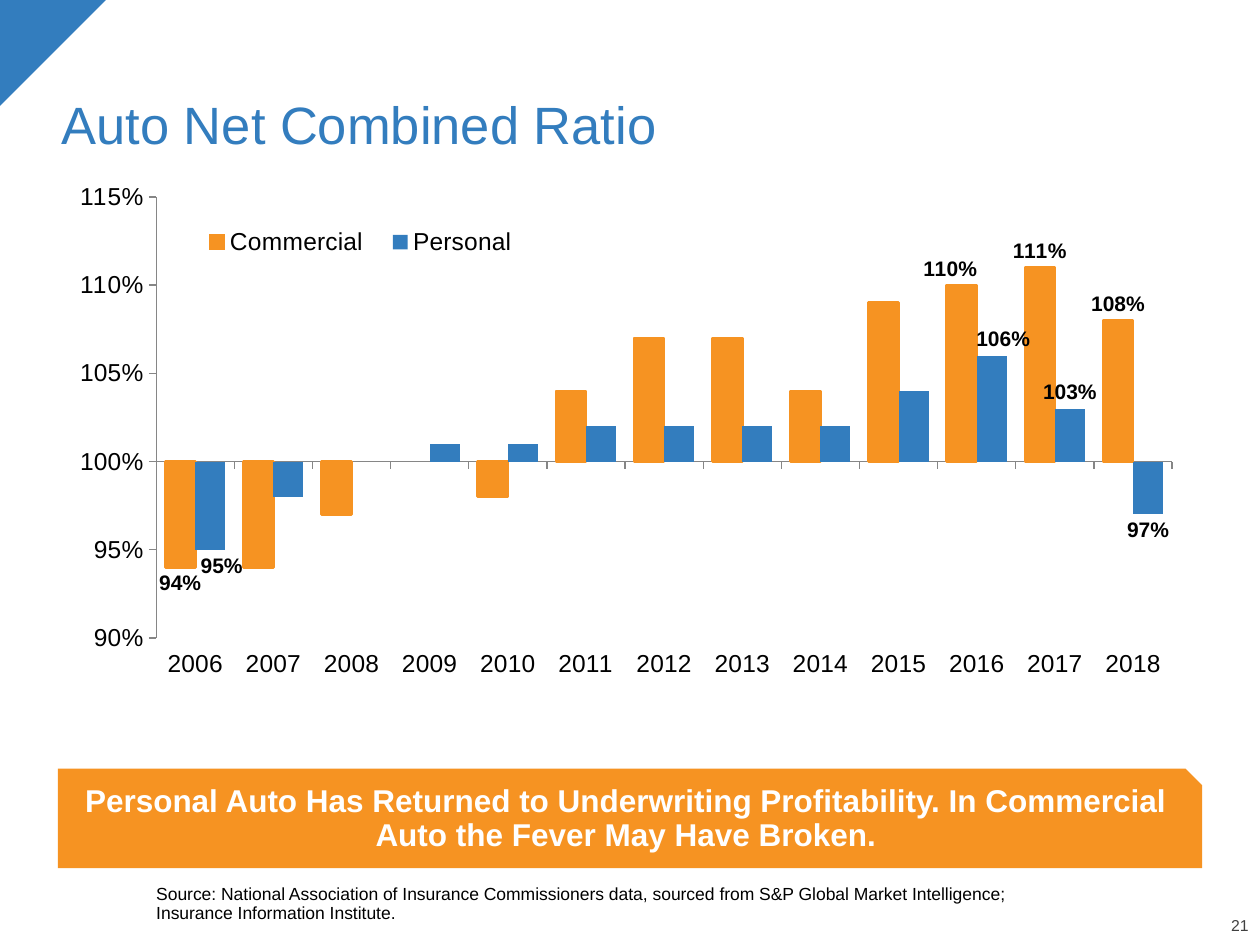
from dataclasses import dataclass

from pptx import Presentation
from pptx.chart.data import CategoryChartData
from pptx.dml.color import RGBColor
from pptx.enum.chart import (XL_CHART_TYPE, XL_LABEL_POSITION,
                             XL_LEGEND_POSITION, XL_TICK_LABEL_POSITION,
                             XL_TICK_MARK)
from pptx.enum.shapes import MSO_SHAPE
from pptx.enum.text import MSO_ANCHOR, PP_ALIGN
from pptx.oxml import parse_xml
from pptx.oxml.ns import nsdecls
from pptx.util import Inches, Pt


@dataclass(frozen=True)
class Theme:
    font: str = "Arial"
    blue: str = "337DBE"
    orange: str = "F69322"
    black: str = "000000"
    white: str = "FFFFFF"
    grey: str = "404040"
    axis: str = "868686"
    title: int = 30
    callout: int = 18
    chart: int = 14
    label: int = 12
    source: int = 10
    number: int = 9


def rgb(value):
    return RGBColor.from_string(value)


def style_font(font, name, size, color, bold=False):
    font.name, font.size, font.bold = name, Pt(size), bold
    font.color.rgb = rgb(color)


def write(sp, text, *, font, size, color, bold=False, align=PP_ALIGN.LEFT,
          anchor=MSO_ANCHOR.BOTTOM, insets=(0, 0, 0, 0)):
    """Fill a shape with one paragraph; a newline becomes a line break."""
    tf = sp.text_frame
    tf.word_wrap = True
    tf.vertical_anchor = anchor
    (tf.margin_left, tf.margin_top,
     tf.margin_right, tf.margin_bottom) = map(Inches, insets)
    p = tf.paragraphs[0]
    p.text = text
    p.alignment = align
    p.line_spacing = 0.9
    for r in p.runs:
        style_font(r.font, font, size, color, bold)


def layout_xml(**parts):
    """Manual chart layout; every keyword is a c:manualLayout child."""
    body = "".join(f'<c:{tag} val="{val}"/>' for tag, val in parts.items())
    return parse_xml(f'<c:layout {nsdecls("c")}><c:manualLayout>{body}'
                     '</c:manualLayout></c:layout>')


class SlideBuilder:
    """Places elements on a grid of 100 columns by 75 rows."""

    def __init__(self, prs, theme):
        self.theme = theme
        self.unit = prs.slide_width / 100
        self.slide = prs.slides.add_slide(prs.slide_layouts[6])

    def box(self, *cells):
        return [round(c * self.unit) for c in cells]

    def text(self, cells, text, **fmt):
        sp = self.slide.shapes.add_textbox(*self.box(*cells))
        write(sp, text, font=self.theme.font, **fmt)

    def shape(self, kind, cells, color, rotation=0):
        sp = self.slide.shapes.add_shape(kind, *self.box(*cells))
        sp.shadow.inherit = False
        sp.fill.solid()
        sp.fill.fore_color.rgb = rgb(color)
        sp.line.fill.background()
        sp.rotation = rotation
        return sp

    def callout(self, cells, text):
        t = self.theme
        sp = self.shape(MSO_SHAPE.SNIP_1_RECTANGLE, cells, t.orange)
        write(sp, text, font=t.font, size=t.callout, color=t.white, bold=True,
              align=PP_ALIGN.CENTER, anchor=MSO_ANCHOR.MIDDLE,
              insets=(0.1, 0.05, 0.1, 0.1))

    def column_chart(self, cells, categories, series):
        """series: name -> (values, color, line width, {point: label shift})."""
        t = self.theme
        data = CategoryChartData(number_format="0%")
        data.categories = categories
        for name, (values, *_) in series.items():
            data.add_series(name, values)
        chart = self.slide.shapes.add_chart(
            XL_CHART_TYPE.COLUMN_CLUSTERED, *self.box(*cells), data).chart
        chart.has_title = False
        style_font(chart.font, t.font, t.chart, t.black)
        plot = chart.plots[0]
        plot.gap_width, plot.overlap = 60, 0
        plot.vary_by_categories = False
        for ser, (_, color, width, shifts) in zip(plot.series, series.values()):
            self.style_series(ser, color, width, shifts)
        self.style_axes(chart)

        chart.has_legend = True
        legend = chart.legend
        legend.position = XL_LEGEND_POSITION.TOP
        legend.include_in_layout = False
        legend._element.xpath("c:legendPos")[0].addnext(layout_xml(
            xMode="edge", yMode="edge", x=0.12, y=0.08, w=0.29, h=0.07))
        area = chart._chartSpace.xpath("c:chart/c:plotArea")[0]
        for old in area.xpath("c:layout"):
            area.remove(old)
        area.insert(0, layout_xml(
            layoutTarget="inner", xMode="edge", yMode="edge",
            x=0.086, y=0.036, w=0.889, h=0.771))

    def style_series(self, ser, color, width, shifts):
        t = self.theme
        ser.invert_if_negative = False
        ser.format.fill.solid()
        ser.format.fill.fore_color.rgb = rgb(color)
        if width:
            ser.format.line.color.rgb = rgb(color)
            ser.format.line.width = Pt(width)
        for i, shift in shifts.items():
            label = ser.points[i].data_label
            style_font(label.font, t.font, t.label, t.black, bold=True)
            label.position = XL_LABEL_POSITION.OUTSIDE_END
            if shift:
                idx = ser._element.xpath(f'.//c:dLbl/c:idx[@val="{i}"]')[0]
                idx.addnext(layout_xml(x=shift, y=0))
        ser.data_labels.show_value = False

    def style_axes(self, chart):
        value, category = chart.value_axis, chart.category_axis
        value.minimum_scale, value.maximum_scale = 0.9, 1.15
        value.major_unit = 0.05
        value.crosses_at = 1
        value.has_major_gridlines = False
        value.tick_labels.number_format = "0%"
        value.tick_labels.number_format_is_linked = False
        category.tick_label_position = XL_TICK_LABEL_POSITION.LOW
        for axis in (value, category):
            axis.major_tick_mark = XL_TICK_MARK.OUTSIDE
            axis.format.line.color.rgb = rgb(self.theme.axis)


def main():
    prs = Presentation()
    prs.slide_width, prs.slide_height = Inches(10), Inches(7.5)
    t = Theme()
    s = SlideBuilder(prs, t)

    s.shape(MSO_SHAPE.RIGHT_TRIANGLE, (0, 0, 8.4, 8.4), t.blue, rotation=90)
    s.text((94.3, 72.9, 4.8, 1.3), "21", size=t.number, color=t.grey,
           align=PP_ALIGN.RIGHT)
    s.text((3.9, 2.5, 92.5, 10.4), "Auto Net Combined Ratio", size=t.title,
           color=t.blue, insets=(0.1, 0.05, 0.1, 0.05))
    s.text((12.4, 68.8, 84, 4.5),
           "Source: National Association of Insurance Commissioners data, "
           "sourced from S&P Global Market Intelligence;\n"
           "Insurance Information Institute.", size=t.source, color=t.black)
    s.callout((4.6, 61, 90.8, 7.9),
              "Personal Auto Has Returned to Underwriting Profitability. "
              "In Commercial Auto the Fever May Have Broken.")

    commercial = (0.94, 0.94, 0.97, 1, 0.98, 1.04, 1.07, 1.07, 1.04, 1.09,
                  1.1, 1.11, 1.08)
    personal = (0.95, 0.98, 1, 1.01, 1.01, 1.02, 1.02, 1.02, 1.02, 1.04,
                1.06, 1.03, 0.97)
    s.column_chart(
        (4.6, 14, 90.7, 45.4), [str(year) for year in range(2006, 2019)],
        {"Commercial ": (commercial, t.orange, 1.5,
                         {0: 0, 10: -0.01, 11: 0, 12: 0}),
         "Personal": (personal, t.blue, 0,
                      {0: 0.01, 10: 0.01, 11: 0, 12: 0})})
    prs.save("out.pptx")


if __name__ == "__main__":
    main()
